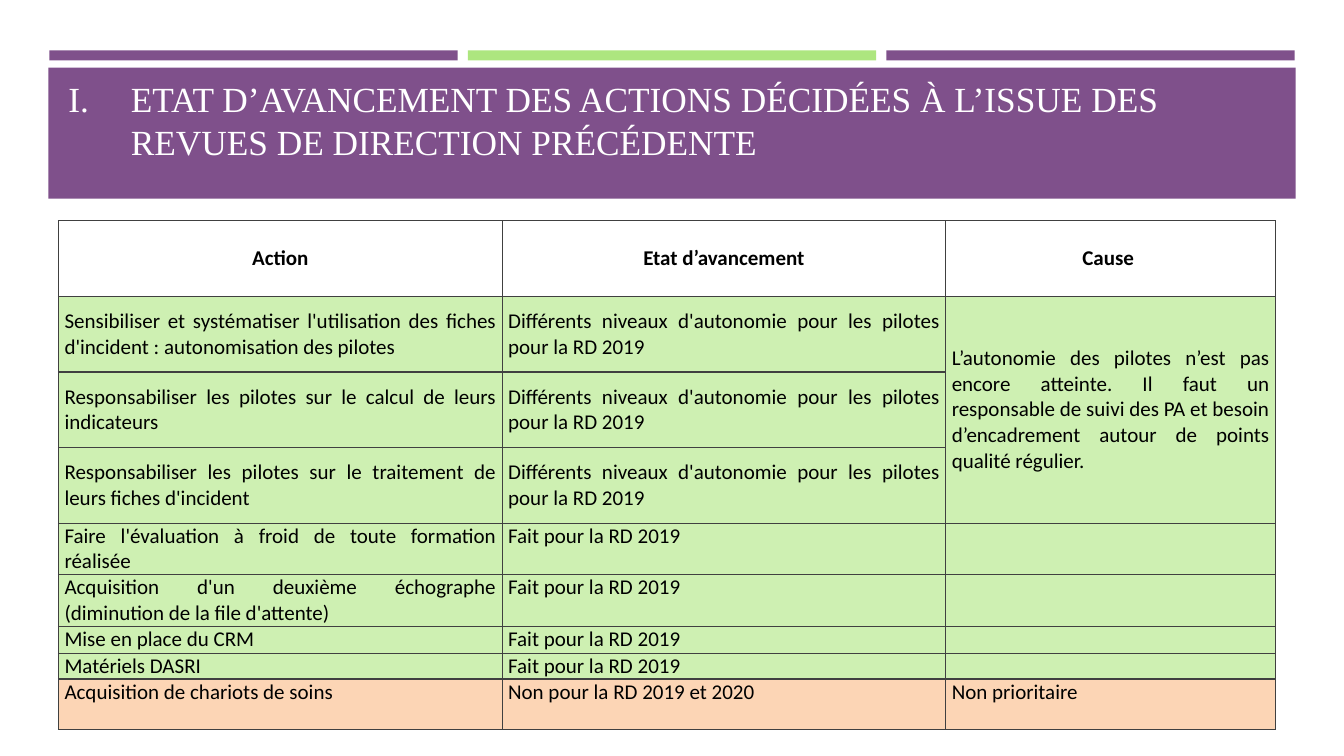
from dataclasses import dataclass

from lxml import etree
from pptx import Presentation, util as u
from pptx.dml.color import RGBColor
from pptx.enum import shapes, text
from pptx.oxml import ns

PX = u.Inches(1) // 100  # 100 px to the inch


@dataclass(frozen=True)
class Theme:
    plum: str = "7F508B"
    lime: str = "ADE67F"
    done: str = "CEF0B2"
    late: str = "FCD5B5"
    edge: str = "404040"
    ink: str = "000000"
    white: str = "FFFFFF"
    head: str = "Times New Roman"
    body: str = "Calibri"
    big: float = 25.2
    small: int = 15


@dataclass(frozen=True)
class Box:
    left: int
    top: int
    width: int
    height: int

    def emu(self) -> list[int]:
        return [n * PX for n in (self.left, self.top, self.width, self.height)]


@dataclass(frozen=True)
class Bar:
    box: Box
    color: str


@dataclass(frozen=True)
class Row:
    height: int
    texts: tuple[str, str, str]
    fill: str | None
    middle: bool = False


T = Theme()
ALIGN = text.PP_ALIGN
ANCHOR = text.MSO_ANCHOR

# Bars above the title, and the title band
BARS = [Bar(Box(49 + 415 * i, 50, 405, 10), color)
        for i, color in enumerate((T.plum, T.lime, T.plum))]
BARS.append(Bar(Box(48, 67, 1237, 130), T.plum))

TITLE = ("ETAT D’AVANCEMENT DES ACTIONS DÉCIDÉES À L’ISSUE DES "
         "REVUES DE DIRECTION PRÉCÉDENTE")

# Table content
LEVELS = "Différents niveaux d'autonomie pour les pilotes pour la RD 2019"
FAIT = "Fait pour la RD 2019"
CAUSE = ("L’autonomie des pilotes n’est pas encore atteinte. Il faut un "
         "responsable de suivi des PA et besoin d’encadrement autour de "
         "points qualité régulier.")
COLS = (440, 440, 327)
ROWS = [
    Row(75, ("Action", "Etat d’avancement", "Cause "), None, True),
    Row(75, ("Sensibiliser et systématiser l'utilisation des fiches "
             "d'incident : autonomisation des pilotes", LEVELS, CAUSE),
        T.done, True),
    Row(75, ("Responsabiliser les pilotes sur le calcul de leurs indicateurs",
             LEVELS, ""), T.done, True),
    Row(75, ("Responsabiliser les pilotes sur le traitement de leurs fiches "
             "d'incident", LEVELS, ""), T.done, True),
    Row(51, ("Faire l'évaluation à froid de toute formation réalisée",
             FAIT, ""), T.done),
    Row(51, ("Acquisition d'un deuxième échographe (diminution de la file "
             "d'attente)", FAIT, ""), T.done),
    Row(27, ("Mise en place du CRM", FAIT, ""), T.done),
    Row(25, ("Matériels DASRI", FAIT, ""), T.done),
    Row(50, ("Acquisition de chariots de soins",
             "Non pour la RD 2019 et 2020", "Non prioritaire"), T.late),
]


def style(font, name: str, size: float, color: str, bold: bool = False) -> None:
    font.name, font.size, font.bold = name, u.Pt(size), bold
    font.color.rgb = RGBColor.from_string(color)


def draw_bar(slide, bar: Bar) -> None:
    shape = slide.shapes.add_shape(shapes.MSO_SHAPE.RECTANGLE, *bar.box.emu())
    shape.shadow.inherit = False
    shape.fill.solid()
    shape.fill.fore_color.rgb = RGBColor.from_string(bar.color)
    shape.line.fill.background()


def draw_title(slide, box: Box) -> None:
    frame = slide.shapes.add_textbox(*box.emu()).text_frame
    frame.word_wrap = True
    frame.vertical_anchor = ANCHOR.BOTTOM
    para = frame.paragraphs[0]
    para.text = TITLE
    para.add_line_break()
    props = para._p.get_or_add_pPr()
    props.set("marL", str(62 * PX))
    props.set("indent", str(-62 * PX))
    num = etree.SubElement(props, ns.qn("a:buAutoNum"))
    num.set("type", "romanUcPeriod")
    style(para.font, T.head, T.big, T.white)


def add_edges(cell) -> None:
    props = cell._tc.get_or_add_tcPr()
    for i, side in enumerate("LRTB"):
        line = etree.Element(ns.qn(f"a:ln{side}"), w=str(u.Pt(1)))
        fill = etree.SubElement(line, ns.qn("a:solidFill"))
        etree.SubElement(fill, ns.qn("a:srgbClr"), val=T.edge)
        props.insert(i, line)


def draw_cell(cell, words: str, row: Row) -> None:
    cell.margin_left = cell.margin_right = 6 * PX
    cell.margin_top = cell.margin_bottom = 0
    cell.vertical_anchor = ANCHOR.MIDDLE if row.middle else ANCHOR.TOP
    if row.fill:
        cell.fill.solid()
        cell.fill.fore_color.rgb = RGBColor.from_string(row.fill)
    else:
        cell.fill.background()
    add_edges(cell)
    para = cell.text_frame.paragraphs[0]
    if words:
        para.text = words
    para.alignment = ALIGN.JUSTIFY if row.fill else ALIGN.CENTER
    style(para.font, T.body, T.small, T.ink, bold=row.fill is None)


def draw_table(slide, left: int, top: int) -> None:
    box = Box(left, top, sum(COLS), sum(row.height for row in ROWS))
    table = slide.shapes.add_table(len(ROWS), len(COLS), *box.emu()).table
    table.first_row = table.horz_banding = False
    for col, width in zip(table.columns, COLS):
        col.width = width * PX
    for r, row in enumerate(ROWS):
        table.rows[r].height = row.height * PX
        for c, words in enumerate(row.texts):
            draw_cell(table.cell(r, c), words, row)
    # One cause covers the three rows on autonomy
    table.cell(1, 2).merge(table.cell(3, 2))


def main() -> None:
    deck = Presentation()
    deck.slide_width, deck.slide_height = 1333 * PX, 750 * PX
    slide = deck.slides.add_slide(deck.slide_layouts[6])
    for bar in BARS:
        draw_bar(slide, bar)
    draw_table(slide, 58, 219)
    draw_title(slide, Box(58, 97, 1206, 111))
    deck.save("out.pptx")


if __name__ == "__main__":
    main()
